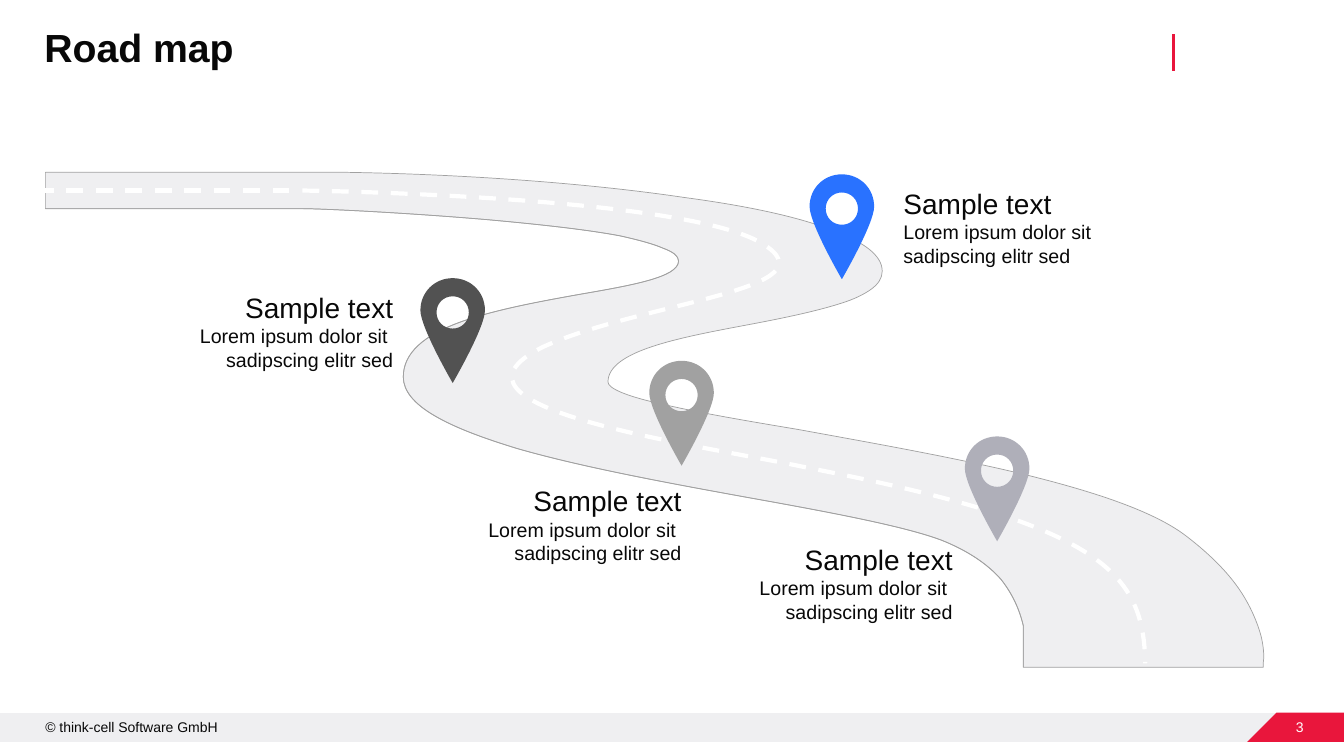
"""Builds a road map slide with a winding road, four pins and their labels."""
from dataclasses import dataclass

from lxml import etree
from pptx import Presentation
from pptx import util as u
from pptx.dml.color import RGBColor
from pptx.enum import dml, shapes, text
from pptx.oxml import ns

Point = tuple[float, float]
Segment = tuple[Point, ...]
Contour = list[Segment]

INK = RGBColor(0x08, 0x08, 0x08)
WHITE = RGBColor(0xFF, 0xFF, 0xFF)
RED = RGBColor(0xE9, 0x16, 0x3C)
PALE = RGBColor(0xEF, 0xEF, 0xF1)
GRAY = RGBColor(0xA1, 0xA1, 0xA1)
DARK = RGBColor(0x52, 0x52, 0x52)
LILAC = RGBColor(0xAF, 0xAF, 0xB9)
BLUE = RGBColor(0x29, 0x72, 0xFF)

FONT = "Arial"
LEFT, RIGHT = text.PP_ALIGN.LEFT, text.PP_ALIGN.RIGHT

FAR_EDGE: Contour = [
    ((0.45, 1.71),), ((3.45, 1.71),),
    ((4.63, 1.73), (5.85, 1.82), (6.79, 1.96)),
    ((7.39, 2.04), (7.86, 2.14), (8.19, 2.26)),
    ((8.56, 2.39), (8.75, 2.53), (8.75, 2.69)),
    ((8.75, 2.76), (8.71, 2.82), (8.64, 2.87)),
    ((8.57, 2.92), (8.47, 2.97), (8.34, 3.01)),
    ((8.09, 3.09), (7.75, 3.16), (7.43, 3.22)),
    ((6.74, 3.35), (6.03, 3.48), (6.03, 3.79)),
    ((6.03, 3.85), (6.2, 3.93), (6.57, 4.01)),
    ((6.91, 4.09), (7.37, 4.17), (7.91, 4.26)),
    ((8.62, 4.39), (9.42, 4.53), (10.13, 4.7)),
    ((10.95, 4.9), (11.49, 5.1), (11.78, 5.33)),
    ((12, 5.5), (12.18, 5.68), (12.3, 5.86)),
    ((12.4, 6.01), (12.47, 6.17), (12.51, 6.32)),
    ((12.53, 6.41), (12.54, 6.5), (12.53, 6.57)),
    ((12.53, 6.62),),
]
NEAR_EDGE: Contour = [
    ((10.15, 6.62),), ((10.15, 6.21),),
    ((10.11, 6.04), (10.04, 5.89), (9.93, 5.75)),
    ((9.79, 5.59), (9.59, 5.46), (9.34, 5.36)),
    ((8.97, 5.22), (8.22, 5.08), (7.44, 4.94)),
    ((6.67, 4.8), (5.79, 4.64), (5.13, 4.45)),
    ((4.77, 4.34), (4.51, 4.24), (4.32, 4.13)),
    ((4.11, 4.01), (4, 3.88), (4, 3.74)),
    ((4, 3.51), (4.19, 3.33), (4.58, 3.19)),
    ((4.92, 3.07), (5.36, 2.99), (5.75, 2.92)),
    ((6.27, 2.83), (6.73, 2.75), (6.73, 2.59)),
    ((6.73, 2.54), (6.68, 2.5), (6.57, 2.46)),
    ((6.48, 2.42), (6.33, 2.38), (6.15, 2.34)),
    ((5.83, 2.28), (5.39, 2.23), (4.84, 2.18)),
    ((4.02, 2.11), (3.19, 2.07), (2.99, 2.07)),
    ((0.45, 2.07),),
]
CENTRE_LINE: Contour = [
    ((3, 1.89),),
    ((3, 1.89), (6.76, 1.94), (7.55, 2.41)),
    ((8.33, 2.87), (6.35, 3), (5.39, 3.44)),
    ((4.15, 4.05), (6.93, 4.41), (8.01, 4.64)),
    ((10.95, 5.21), (11.34, 5.68), (11.36, 6.58)),
]
PIN_HOLE: Contour = [
    ((0, 0.5),),
    ((-0.09, 0.5), (-0.16, 0.43), (-0.16, 0.34)),
    ((-0.16, 0.25), (-0.09, 0.18), (0, 0.18)),
    ((0.09, 0.18), (0.16, 0.25), (0.16, 0.34)),
    ((0.16, 0.43), (0.09, 0.5), (0, 0.5)),
]
PIN_BODY: Contour = [
    ((0, 0),),
    ((-0.18, 0), (-0.32, 0.14), (-0.32, 0.32)),
    ((-0.32, 0.49), (0, 1.04), (0, 1.04)),
    ((0, 1.04), (0.32, 0.49), (0.32, 0.32)),
    ((0.32, 0.14), (0.18, 0), (0, 0)),
]


@dataclass(frozen=True)
class Milestone:
    pin: Point
    color: RGBColor
    label: Point
    align: text.PP_ALIGN = RIGHT


MILESTONES = [
    Milestone((8.35, 1.73), BLUE, (8.96, 1.85), LEFT),
    Milestone((4.49, 2.76), DARK, (1.91, 2.88)),
    Milestone((6.76, 3.58), GRAY, (4.77, 4.8)),
    Milestone((9.89, 4.33), LILAC, (7.46, 5.38)),
]


def style_line(line, color: RGBColor, width: float, dashed: bool = False) -> None:
    line.color.rgb = color
    line.width = u.Pt(width)
    if dashed:
        line.dash_style = dml.MSO_LINE.DASH


def bend(shape, contours: list[Contour]) -> None:
    strokes = iter(list(shape._element.iter(ns.qn("a:lnTo"))))
    for contour in contours:
        for segment in contour[1:]:
            parts = [next(strokes) for _ in segment]
            if len(parts) == 3:
                curve = etree.Element(ns.qn("a:cubicBezTo"))
                parts[0].addprevious(curve)
                for part in parts:
                    curve.append(part[0])
                    part.getparent().remove(part)


def add_outline(page, contours: list[Contour], closed: bool = True,
                fill: RGBColor | None = None, origin: Point = (0, 0)):
    left, top = origin
    builder = None
    for contour in contours:
        start, *rest = [(u.Inches(left + x), u.Inches(top + y))
                        for segment in contour for x, y in segment]
        if builder is None:
            builder = page.shapes.build_freeform(*start)
        else:
            builder.move_to(*start)
        builder.add_line_segments(rest, close=closed)
    shape = builder.convert_to_shape()
    bend(shape, contours)
    shape.shadow.inherit = False
    shape.line.fill.background()
    if fill is None:
        shape.fill.background()
    else:
        shape.fill.solid()
        shape.fill.fore_color.rgb = fill
    return shape


def add_line(page, start: Point, end: Point, color: RGBColor, width: float,
             dashed: bool = False) -> None:
    ends = [u.Inches(value) for value in (*start, *end)]
    line = page.shapes.add_connector(shapes.MSO_CONNECTOR.STRAIGHT, *ends)
    style_line(line.line, color, width, dashed)
    etree.SubElement(line._element.spPr, ns.qn("a:effectLst"))


def place(box, left: float, top: float, width: float, height: float):
    box.left, box.top = u.Inches(left), u.Inches(top)
    box.width, box.height = u.Inches(width), u.Inches(height)
    frame = box.text_frame
    frame.margin_left = frame.margin_top = frame.margin_right = frame.margin_bottom = 0
    frame.vertical_anchor = text.MSO_ANCHOR.TOP
    frame.word_wrap = True
    return frame


def add_text_box(page, left: float, top: float, width: float, height: float):
    return place(page.shapes.add_textbox(0, 0, 0, 0), left, top, width, height)


def write(para, lines: list[str], size: float, color: RGBColor = INK,
          align: text.PP_ALIGN = LEFT, bold: bool = False) -> None:
    para.alignment = align
    for index, line in enumerate(lines):
        if index:
            para.add_line_break()
        span = para.add_run()
        span.text = line
        span.font.name, span.font.size = FONT, u.Pt(size)
        span.font.color.rgb, span.font.bold = color, bold


def add_frame(page) -> None:
    footer = [((x, y),) for x, y in ((0, 7.07), (13.33, 7.07), (13.33, 7.36), (0, 7.36))]
    corner = [((12.66, 7.07),), *footer[1:3], ((12.37, 7.36),)]
    add_outline(page, [footer], fill=PALE)
    write(add_text_box(page, 0.45, 7.13, 2.46, 0.17).paragraphs[0],
          ["© think-cell Software GmbH"], 10)
    add_line(page, (11.64, 0.34), (11.64, 0.7), RED, 2.25)
    add_outline(page, [corner], fill=RED)
    number = add_text_box(page, 12.76, 7.13, 0.17, 0.17)
    number.vertical_anchor = text.MSO_ANCHOR.MIDDLE
    number.word_wrap = False
    write(number.paragraphs[0], ["3"], 10, WHITE, RIGHT)


def add_road(page) -> None:
    road = add_outline(page, [FAR_EDGE + NEAR_EDGE], fill=PALE)
    style_line(road.line, GRAY, 0.5)
    edge = add_outline(page, [NEAR_EDGE], closed=False)
    style_line(edge.line, GRAY, 0.5)
    marking = add_outline(page, [CENTRE_LINE], closed=False)
    style_line(marking.line, WHITE, 3, dashed=True)
    add_line(page, (2.87, 1.89), (0.45, 1.89), WHITE, 3, dashed=True)


def add_milestone(page, stop: Milestone) -> None:
    frame = add_text_box(page, *stop.label, 1.99, 0.81)
    write(frame.paragraphs[0], ["Sample text"], 20, align=stop.align)
    write(frame.add_paragraph(), ["Lorem ipsum dolor sit ", "sadipscing elitr sed"],
          14, align=stop.align)
    add_outline(page, [PIN_HOLE, PIN_BODY], fill=stop.color, origin=stop.pin)


def main() -> None:
    deck = Presentation()
    deck.slide_width, deck.slide_height = u.Inches(13.33), u.Inches(7.5)
    page = deck.slides.add_slide(deck.slide_layouts[5])
    add_frame(page)
    heading = place(page.shapes.title, 0.44, 0.28, 11.03, 0.42).paragraphs[0]
    heading.line_spacing = 0.9
    write(heading, ["Road map"], 28, bold=True)
    add_road(page)
    for stop in MILESTONES:
        add_milestone(page, stop)
    deck.save("out.pptx")


if __name__ == "__main__":
    main()
